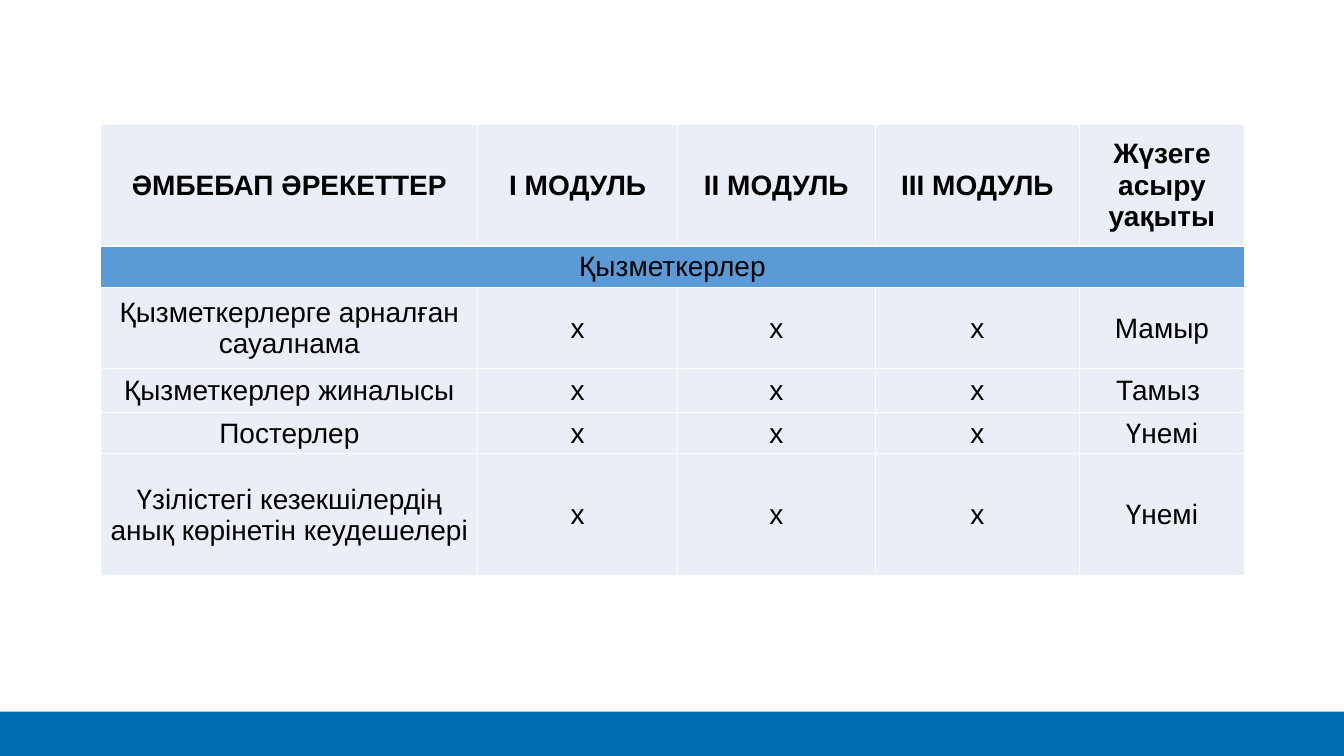
from dataclasses import dataclass

from lxml import etree
from pptx import Presentation
from pptx.dml.color import RGBColor
from pptx.enum.shapes import MSO_SHAPE
from pptx.enum.text import MSO_ANCHOR, PP_ALIGN
from pptx.oxml.ns import qn
from pptx.slide import Slide
from pptx.table import Table, _Cell
from pptx.util import Inches, Pt

RECTANGLE = MSO_SHAPE.RECTANGLE
CENTER = PP_ALIGN.CENTER
MIDDLE = MSO_ANCHOR.MIDDLE

FONT = "Arial"
TEXT_SIZE = Pt(20)
BLACK = "000000"
WHITE = "FFFFFF"
PALE_BLUE = "EAEFF7"
SECTION_BLUE = "5B9BD5"
FOOTER_BLUE = "006DB1"

SLIDE_WIDTH, SLIDE_HEIGHT = 13.33, 7.5
FOOTER_TOP = 7.06
TABLE_LEFT, TABLE_TOP = 1, 1.23
COLUMN_WIDTHS = (3.74, 1.98, 1.96, 2.03, 1.63)
MODULE_MARKS = ("x",) * 3


@dataclass(frozen=True)
class TableRow:
    height: float
    texts: tuple[str, ...]
    fill: str = PALE_BLUE
    bold: bool = False

    @property
    def is_section(self) -> bool:
        return len(self.texts) == 1


def activity(height: float, name: str, time: str) -> TableRow:
    return TableRow(height, (name, *MODULE_MARKS, time))


ROWS = (
    TableRow(
        1.21,
        ("ӘМБЕБАП ӘРЕКЕТТЕР", "І МОДУЛЬ", "ІІ МОДУЛЬ", "ІІІ МОДУЛЬ", "Жүзеге асыру уақыты"),
        bold=True,
    ),
    TableRow(0.41, ("Қызметкерлер",), SECTION_BLUE),
    activity(0.81, "Қызметкерлерге арналған сауалнама", "Мамыр"),
    activity(0.43, "Қызметкерлер жиналысы", "Тамыз "),
    activity(0.41, "Постерлер", "Үнемі"),
    activity(1.21, "Үзілістегі кезекшілердің анық көрінетін кеудешелері", "Үнемі"),
)


def color(value: str) -> RGBColor:
    return RGBColor.from_string(value)


def add_footer_band(slide: Slide) -> None:
    band = slide.shapes.add_shape(
        RECTANGLE,
        Inches(0),
        Inches(FOOTER_TOP),
        Inches(SLIDE_WIDTH),
        Inches(SLIDE_HEIGHT - FOOTER_TOP),
    )
    band.shadow.inherit = False
    band.fill.solid()
    band.fill.fore_color.rgb = color(FOOTER_BLUE)
    band.line.fill.background()


def set_borders(cell: _Cell) -> None:
    """Draw thin white lines on all four sides, placed before the cell fill."""
    properties = cell._tc.get_or_add_tcPr()
    for index, side in enumerate(("a:lnL", "a:lnR", "a:lnT", "a:lnB")):
        line = etree.Element(qn(side), w=str(Pt(1)))
        fill = etree.SubElement(line, qn("a:solidFill"))
        etree.SubElement(fill, qn("a:srgbClr"), val=WHITE)
        properties.insert(index, line)


def format_cell(cell: _Cell, fill: str) -> None:
    cell.fill.solid()
    cell.fill.fore_color.rgb = color(fill)
    cell.vertical_anchor = MIDDLE
    cell.margin_left = cell.margin_right = cell.margin_top = Inches(0.01)
    cell.margin_bottom = Inches(0)
    set_borders(cell)


def write_text(cell: _Cell, text: str, bold: bool) -> None:
    paragraph = cell.text_frame.paragraphs[0]
    paragraph.alignment = CENTER
    run = paragraph.add_run()
    run.text = text
    run.font.name = FONT
    run.font.size = TEXT_SIZE
    run.font.bold = bold
    run.font.color.rgb = color(BLACK)


def fill_row(table: Table, index: int, row: TableRow) -> None:
    table.rows[index].height = Inches(row.height)
    cells = list(table.rows[index].cells)
    for cell in cells:
        format_cell(cell, row.fill)
    if row.is_section:
        cells[0].merge(cells[-1])
    for cell, text in zip(cells, row.texts):
        write_text(cell, text, row.bold)


def add_activity_table(slide: Slide) -> None:
    table = slide.shapes.add_table(
        len(ROWS),
        len(COLUMN_WIDTHS),
        Inches(TABLE_LEFT),
        Inches(TABLE_TOP),
        Inches(sum(COLUMN_WIDTHS)),
        Inches(sum(row.height for row in ROWS)),
    ).table
    table.first_row = table.horz_banding = False
    for column, width in zip(table.columns, COLUMN_WIDTHS):
        column.width = Inches(width)
    for index, row in enumerate(ROWS):
        fill_row(table, index, row)


def main() -> None:
    presentation = Presentation()
    presentation.slide_width = Inches(SLIDE_WIDTH)
    presentation.slide_height = Inches(SLIDE_HEIGHT)
    blank_layout = presentation.slide_layouts[6]
    slide = presentation.slides.add_slide(blank_layout)
    add_footer_band(slide)
    add_activity_table(slide)
    presentation.save("out.pptx")


if __name__ == "__main__":
    main()
